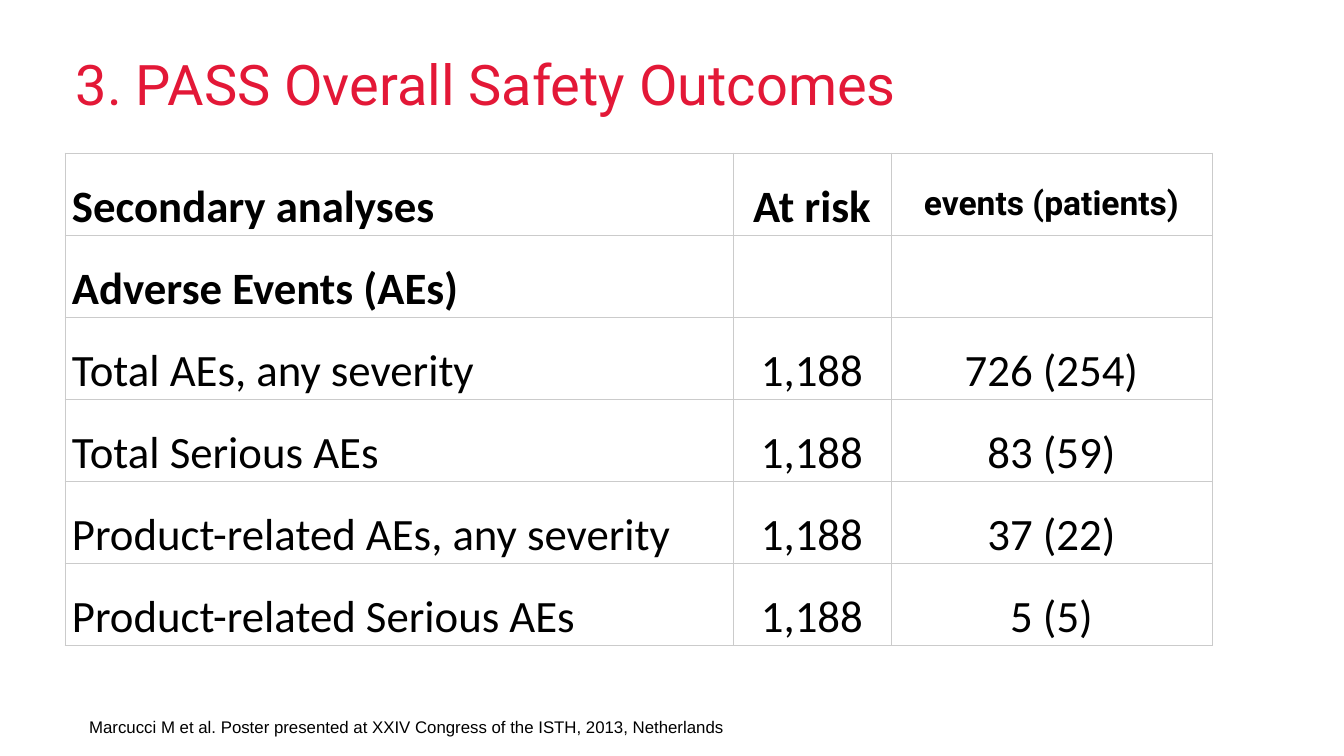
from lxml import etree
from pptx import Presentation
from pptx.dml.color import RGBColor
from pptx.enum.text import MSO_ANCHOR, MSO_AUTO_SIZE, PP_ALIGN
from pptx.oxml.ns import qn
from pptx.util import Emu, Pt

LEFT, CENTER = PP_ALIGN.LEFT, PP_ALIGN.CENTER
MIDDLE = MSO_ANCHOR.MIDDLE
NO_AUTOFIT = MSO_AUTO_SIZE.NONE
FIT_SHAPE = MSO_AUTO_SIZE.SHAPE_TO_FIT_TEXT

RED = RGBColor(0xE3, 0x18, 0x37)
BLACK = RGBColor(0x00, 0x00, 0x00)
WHITE = RGBColor(0xFF, 0xFF, 0xFF)
GRID_GRAY = RGBColor(0xCB, 0xCB, 0xCB)

EMU_PER_PX = 914400 / 134.4
TITLE_ONLY = 5
COLUMN_WIDTHS = (668, 158, 321)
# Least heights: the rows grow to hold their text
ROW_HEIGHTS = (51, 46, 51, 51, 51, 51)
BOLD_ROWS = 2
OUTCOMES = (
    ("Secondary analyses", "At risk", "events (patients)"),
    ("Adverse Events (AEs)", "", ""),
    ("Total AEs, any severity", "1,188", "726 (254)"),
    ("Total Serious AEs", "1,188", "83 (59)"),
    ("Product-related AEs, any severity", "1,188", "37 (22)"),
    ("Product-related Serious AEs", "1,188", "5 (5)"),
)


def px(length):
    return Emu(round(length * EMU_PER_PX))


def format_paragraph(paragraph, name, size, color, bold=False, alignment=LEFT):
    paragraph.alignment = alignment
    font = paragraph.font
    font.name, font.size, font.bold = name, Pt(size), bold
    font.color.rgb = color


def set_borders(cell, color, width):
    properties = cell._tc.get_or_add_tcPr()
    for index, side in enumerate(("lnL", "lnR", "lnT", "lnB")):
        line = etree.Element(qn(f"a:{side}"), w=str(Pt(width)))
        fill = etree.SubElement(line, qn("a:solidFill"))
        etree.SubElement(fill, qn("a:srgbClr"), val=str(color))
        properties.insert(index, line)


def set_freeform_outline(slide, shape):
    """Give a placeholder a freeform outline that follows its box."""
    builder = slide.shapes.build_freeform(0, 0)
    corners = ((shape.width, 0), (shape.width, shape.height), (0, shape.height))
    builder.add_line_segments(corners, close=True)
    outline = builder.convert_to_shape()
    shape._element.spPr.append(outline._element.spPr.find(qn("a:custGeom")))
    slide.shapes._spTree.remove(outline._element)


def add_title(slide, left, top, width, height):
    title = slide.shapes.title
    title.left, title.top = px(left), px(top)
    title.width, title.height = px(width), px(height)
    set_freeform_outline(slide, title)
    frame = title.text_frame
    frame.text = "3. PASS Overall Safety Outcomes"
    frame.auto_size = NO_AUTOFIT
    frame.vertical_anchor = MIDDLE
    frame.margin_left = frame.margin_right = 0
    frame.margin_top = frame.margin_bottom = 0
    format_paragraph(frame.paragraphs[0], "Roboto", 30, RED)


def fill_cell(cell, text, row, column):
    cell.fill.solid()
    cell.fill.fore_color.rgb = WHITE
    set_borders(cell, GRID_GRAY, 0.5)
    cell.vertical_anchor = MIDDLE
    cell.margin_left = cell.margin_right = px(7)
    cell.margin_top = cell.margin_bottom = 0
    if not text:
        return
    cell.text = text
    paragraph = cell.text_frame.paragraphs[0]
    paragraph.line_spacing = 1.5
    # The last column heading is smaller and set in the title font
    name, size = ("Roboto", 18) if (row, column) == (0, 2) else ("Calibri", 24)
    format_paragraph(paragraph, name, size, BLACK, row < BOLD_ROWS,
                     CENTER if column else LEFT)


def add_outcomes_table(slide, left, top, width, height):
    frame = slide.shapes.add_table(len(OUTCOMES), len(COLUMN_WIDTHS),
                                   px(left), px(top), px(width), px(height))
    table = frame.table
    table.first_row = table.horz_banding = False
    for column, column_width in zip(table.columns, COLUMN_WIDTHS):
        column.width = px(column_width)
    for row, texts in enumerate(OUTCOMES):
        table.rows[row].height = px(ROW_HEIGHTS[row])
        for column, text in enumerate(texts):
            fill_cell(table.cell(row, column), text, row, column)
    frame.height = px(height)


def add_citation(slide, left, top, width, height):
    box = slide.shapes.add_textbox(px(left), px(top), px(width), px(height))
    frame = box.text_frame
    frame.word_wrap = True
    frame.auto_size = FIT_SHAPE
    frame.text = ("Marcucci M et al. Poster presented at XXIV Congress "
                  "of the ISTH, 2013, Netherlands")
    format_paragraph(frame.paragraphs[0], "Arial", 9, BLACK)


def main():
    presentation = Presentation()
    presentation.slide_width, presentation.slide_height = px(1344), px(756)
    slide = presentation.slides.add_slide(presentation.slide_layouts[TITLE_ONLY])
    slide.background.fill.solid()
    slide.background.fill.fore_color.rgb = WHITE

    add_title(slide, 76, 36, 1192, 95)
    add_outcomes_table(slide, 65, 153, sum(COLUMN_WIDTHS), 484)
    add_citation(slide, 76, 710, 672, 33)
    presentation.save("out.pptx")


if __name__ == "__main__":
    main()
